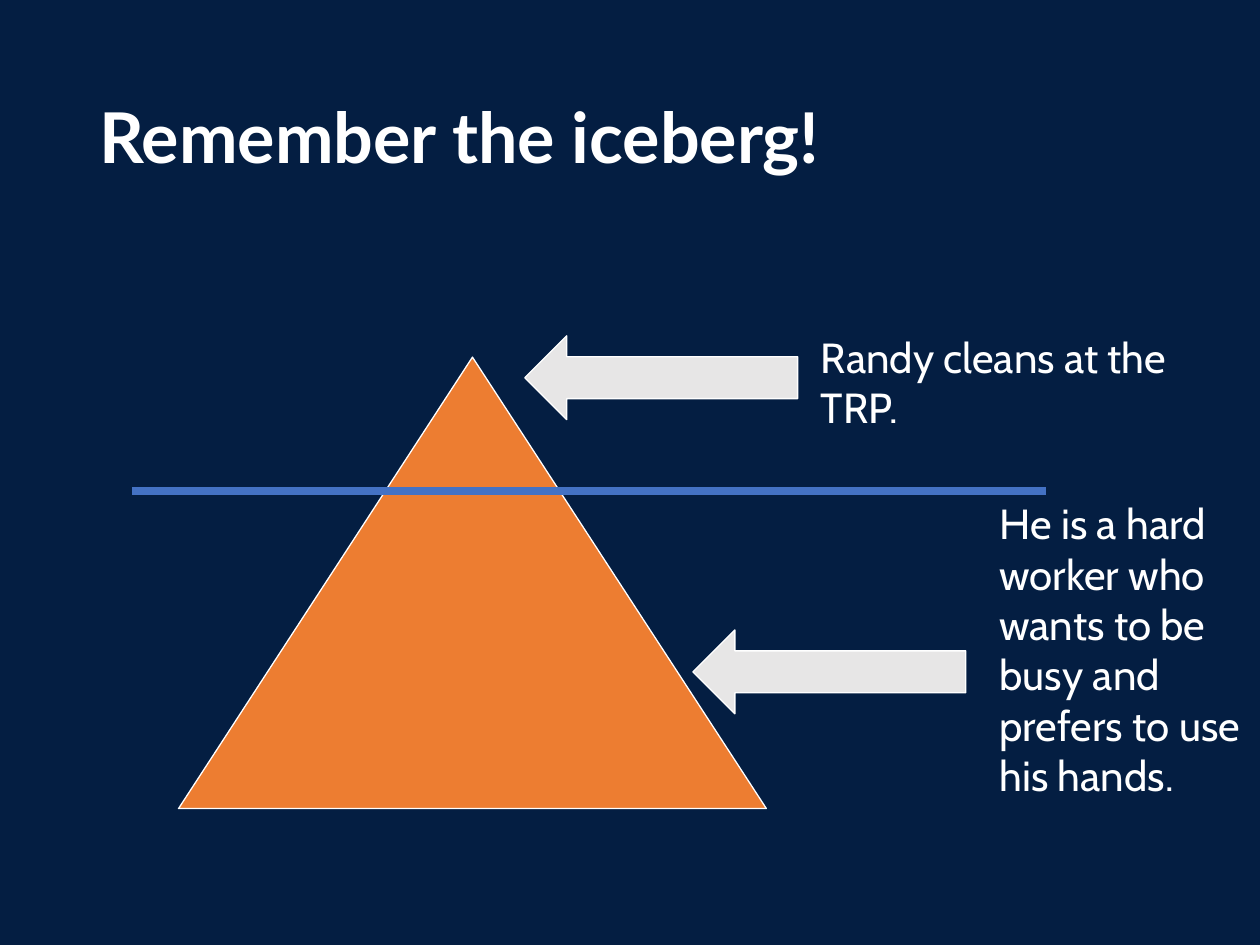
import pptx
import pptx.dml.color
import pptx.enum.shapes
import pptx.enum.text
import pptx.oxml
import pptx.oxml.ns
import pptx.util
from pptx.util import Cm

COLOURS = {
    "sea": "041E42",
    "white": "FFFFFF",
    "iceberg": "ED7D31",
    "arrow": "E7E6E6",
    "waterline": "4472C4",
}
SHAPES = pptx.enum.shapes.MSO_SHAPE
ANCHORS = pptx.enum.text.MSO_ANCHOR


def colour(name):
    return pptx.dml.color.RGBColor.from_string(COLOURS[name])


def add_text(slide, box, text, font, size, bold=False,
             anchor=ANCHORS.TOP, line_spacing=1.0):
    frame = slide.shapes.add_textbox(*map(Cm, box)).text_frame
    frame.word_wrap = True
    frame.vertical_anchor = anchor
    paragraph = frame.paragraphs[0]
    paragraph.line_spacing = line_spacing
    run = paragraph.add_run()
    run.text = text
    run.font.name = font
    run.font.size = pptx.util.Pt(size)
    run.font.bold = bold
    run.font.color.rgb = colour("white")


def add_outlined_shape(slide, preset, box, fill):
    shape = slide.shapes.add_shape(preset, *map(Cm, box))
    shape.shadow.inherit = False
    shape.fill.solid()
    shape.fill.fore_color.rgb = colour(fill)
    shape.line.color.rgb = colour("white")
    shape.line.width = pptx.util.Pt(0.75)


def add_waterline(slide, left, right, level):
    waterline = slide.shapes.add_connector(
        pptx.enum.shapes.MSO_CONNECTOR.STRAIGHT,
        Cm(left), Cm(level), Cm(right), Cm(level))
    waterline.line.color.rgb = colour("waterline")
    waterline.line.width = pptx.util.Pt(4.5)
    properties = waterline._element.spPr
    properties.append(pptx.oxml.parse_xml(
        "<a:effectLst %s/>" % pptx.oxml.ns.nsdecls("a")))


def main():
    deck = pptx.Presentation()
    deck.slide_width, deck.slide_height = Cm(25.4), Cm(19.05)
    slide = deck.slides.add_slide(deck.slide_layouts[6])
    slide.background.fill.solid()
    slide.background.fill.fore_color.rgb = colour("sea")

    # Title
    add_text(slide, (1.75, 1.01, 21.9, 3.68), "Remember the iceberg!",
             "Lato", 40, bold=True, anchor=ANCHORS.MIDDLE, line_spacing=0.9)

    # Iceberg
    add_outlined_shape(slide, SHAPES.ISOSCELES_TRIANGLE,
                       (3.6, 7.2, 11.85, 9.1), "iceberg")

    # Arrows to the tip and to the hidden part
    for left, top in ((10.58, 6.77), (13.97, 12.7)):
        add_outlined_shape(slide, SHAPES.LEFT_ARROW,
                           (left, top, 5.5, 1.69), "arrow")

    # What is seen and what lies below the surface
    observations = (
        ((16.3, 6.56, 7.83, 2.31), "Randy cleans at the TRP."),
        ((19.9, 9.91, 5.5, 7.44),
         "He is a hard worker who wants to be busy and "
         "prefers to use his hands."),
    )
    for box, text in observations:
        add_text(slide, box, text, "Cabin", 24)

    # Water surface
    add_waterline(slide, 2.67, 21.08, 9.9)

    deck.save("out.pptx")


if __name__ == "__main__":
    main()
